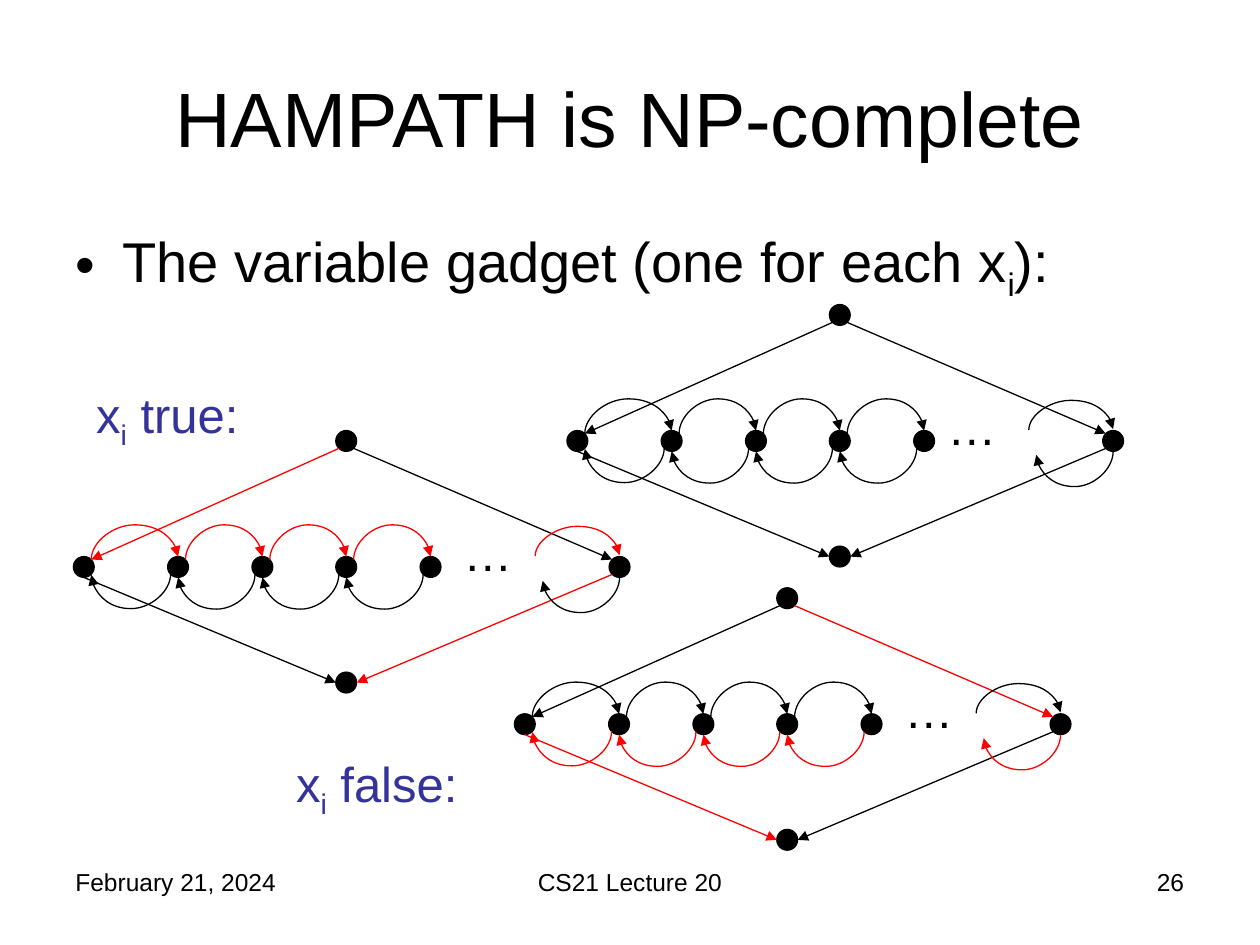
from lxml import etree
from pptx import Presentation
from pptx.dml.color import RGBColor
from pptx.enum.shapes import MSO_CONNECTOR, MSO_SHAPE
from pptx.enum.text import MSO_ANCHOR, PP_ALIGN
from pptx.oxml.ns import qn
from pptx.util import Cm, Pt

STRAIGHT, CURVE = MSO_CONNECTOR.STRAIGHT, MSO_CONNECTOR.CURVE
LEFT, CENTER, RIGHT = PP_ALIGN.LEFT, PP_ALIGN.CENTER, PP_ALIGN.RIGHT
TOP, MIDDLE = MSO_ANCHOR.TOP, MSO_ANCHOR.MIDDLE

BLACK = RGBColor(0, 0, 0)
RED = RGBColor(255, 0, 0)
BLUE = RGBColor(0x33, 0x33, 0x99)
FONT = "Arial"

# All lengths are in centimetres.
# Text pieces (odd ones are subscripts), box, size, colour, alignment, anchor
TEXTS = [
    (["February 21, 2024"], (1.27, 17.35, 5.92, 1.32), 14, BLACK, LEFT, TOP),
    (["CS21 Lecture 20"], (8.68, 17.35, 8.04, 1.32), 14, BLACK, CENTER, TOP),
    (["26"], (18.2, 17.35, 5.92, 1.32), 14, BLACK, RIGHT, TOP),
    (["HAMPATH is NP-complete"], (1.27, 0.76, 22.86, 3.18), 44, BLACK, CENTER, MIDDLE),
    (["x", "i", " true:"], (1.69, 7.62, 6.35, 1.45), 28, BLUE, LEFT, TOP),
    (["x", "i", " false:"], (5.72, 15.06, 6.35, 1.45), 28, BLUE, LEFT, TOP),
]
BULLET = (["The variable gadget (one for each x", "i", "):"],
          (1.27, 4.45, 22.86, 2.1), 32, BLACK, LEFT, TOP)

# Centre of the leftmost node, left edge of the ellipsis, edges on the path
RIGHTWARD = {"top-left", "upper arcs", "right-bottom"}
LEFTWARD = {"top-right", "lower arcs", "left-bottom"}
GADGETS = [
    ((11.64, 8.89), 18.85, set()),
    ((1.69, 11.43), 9.09, RIGHTWARD),
    ((10.58, 14.6), 17.98, LEFTWARD),
]

# Node centres relative to the leftmost node
ROW_X = [0, 1.9, 3.6, 5.29, 6.99]
LAST_X = 10.8
APEX_X, APEX_Y, BASE_Y = 5.29, -2.54, 2.33
RADIUS = 0.21
DIAGONAL = 0.15  # horizontal and vertical reach of a node at 45 degrees
ARC_HEIGHT = 0.85
MIN_RISE = 0.02

STRAIGHT_EDGES = {
    "top-left": ((APEX_X - DIAGONAL, APEX_Y + DIAGONAL), (DIAGONAL, -DIAGONAL)),
    "top-right": ((APEX_X + DIAGONAL, APEX_Y + DIAGONAL), (LAST_X - DIAGONAL, -DIAGONAL)),
    "left-bottom": ((0, RADIUS), (APEX_X - RADIUS, BASE_Y)),
    "right-bottom": ((LAST_X - DIAGONAL, DIAGONAL), (APEX_X + RADIUS, BASE_Y)),
}


def arcs():
    """Return start, end and height of the arcs above and below the row."""
    pairs = list(zip(ROW_X, ROW_X[1:]))
    upper = [((a + DIAGONAL, -DIAGONAL), (b, -RADIUS), -ARC_HEIGHT) for a, b in pairs]
    upper.append(((9.1, -0.22), (LAST_X, -0.24), -0.82))
    lower = [((b - DIAGONAL, DIAGONAL), (a, RADIUS), ARC_HEIGHT) for a, b in pairs]
    lower[0] = (lower[0][0], (DIAGONAL, DIAGONAL), ARC_HEIGHT)
    lower.append(((LAST_X, RADIUS), (9.25, 0.28), 0.92))
    return {"upper arcs": upper, "lower arcs": lower}


def add_text(slide, pieces, box, size, color, align, anchor):
    frame = slide.shapes.add_textbox(*map(Cm, box)).text_frame
    frame.word_wrap = True
    frame.vertical_anchor = anchor
    paragraph = frame.paragraphs[0]
    paragraph.alignment = align
    for index, piece in enumerate(pieces):
        run = paragraph.add_run()
        run.text = piece
        run.font.name = FONT
        run.font.size = Pt(size)
        run.font.color.rgb = color
        if index % 2:
            run._r.get_or_add_rPr().set("baseline", "-25000")
    return paragraph


def add_bullet(paragraph):
    properties = paragraph._p.get_or_add_pPr()
    properties.set("marL", str(Cm(0.95)))
    properties.set("indent", str(-Cm(0.95)))
    etree.SubElement(properties, qn("a:buFont")).set("typeface", FONT)
    etree.SubElement(properties, qn("a:buChar")).set("char", "•")


def add_node(slide, x, y):
    node = slide.shapes.add_shape(MSO_SHAPE.OVAL, Cm(x - RADIUS), Cm(y - RADIUS),
                                  Cm(2 * RADIUS), Cm(2 * RADIUS))
    node.shadow.inherit = False
    node.fill.solid()
    node.fill.fore_color.rgb = BLACK
    node.line.color.rgb = BLACK
    node.line.width = Pt(0.75)


def add_arrow(slide, kind, start, end, color):
    arrow = slide.shapes.add_connector(kind, *map(Cm, start + end))
    arrow.line.color.rgb = color
    arrow.line.width = Pt(0.75)
    etree.SubElement(arrow.line._get_or_add_ln(), qn("a:tailEnd")).set("type", "triangle")
    etree.SubElement(arrow._element.spPr, qn("a:effectLst"))
    return arrow


def add_arc(slide, start, end, peak_y, color):
    """Add a curved connector turned a quarter so that it bulges to peak_y."""
    (x0, y0), (x1, y1) = start, end
    rise, span = max(abs(y1 - y0), MIN_RISE), abs(x1 - x0)
    left, top = (x0 + x1 - rise) / 2, (y0 + y1 - span) / 2
    arc = add_arrow(slide, CURVE, (left, top), (left + rise, top + span), color)
    properties = arc._element.spPr
    quarter_turns = 3 if peak_y < y0 else 1
    properties.find(qn("a:xfrm")).set("rot", str(quarter_turns * 5400000))
    guide = etree.SubElement(properties.find(qn("a:prstGeom")).find(qn("a:avLst")), qn("a:gd"))
    guide.set("name", "adj1")
    guide.set("fmla", f"val {round(abs(peak_y - y0) / rise * 100000)}")


def add_gadget(slide, origin, ellipsis_left, path):
    def place(point):
        return origin[0] + point[0], origin[1] + point[1]

    def edge_color(edge):
        return RED if edge in path else BLACK

    row = [(x, 0) for x in ROW_X + [LAST_X]]
    for node in row + [(APEX_X, APEX_Y), (APEX_X, BASE_Y)]:
        add_node(slide, *place(node))
    for edge, (start, end) in STRAIGHT_EDGES.items():
        add_arrow(slide, STRAIGHT, place(start), place(end), edge_color(edge))
    for edge, group in arcs().items():
        for start, end, height in group:
            add_arc(slide, place(start), place(end), origin[1] + height, edge_color(edge))
    add_text(slide, ["…"], (ellipsis_left, origin[1] - 1.02, 1.9, 1.45), 28, BLACK, LEFT, TOP)


def main():
    deck = Presentation()
    deck.slide_width, deck.slide_height = Cm(25.4), Cm(19.05)
    slide = deck.slides.add_slide(deck.slide_layouts[6])
    for text in TEXTS:
        add_text(slide, *text)
    add_bullet(add_text(slide, *BULLET))
    for gadget in GADGETS:
        add_gadget(slide, *gadget)
    deck.save("out.pptx")


if __name__ == "__main__":
    main()
